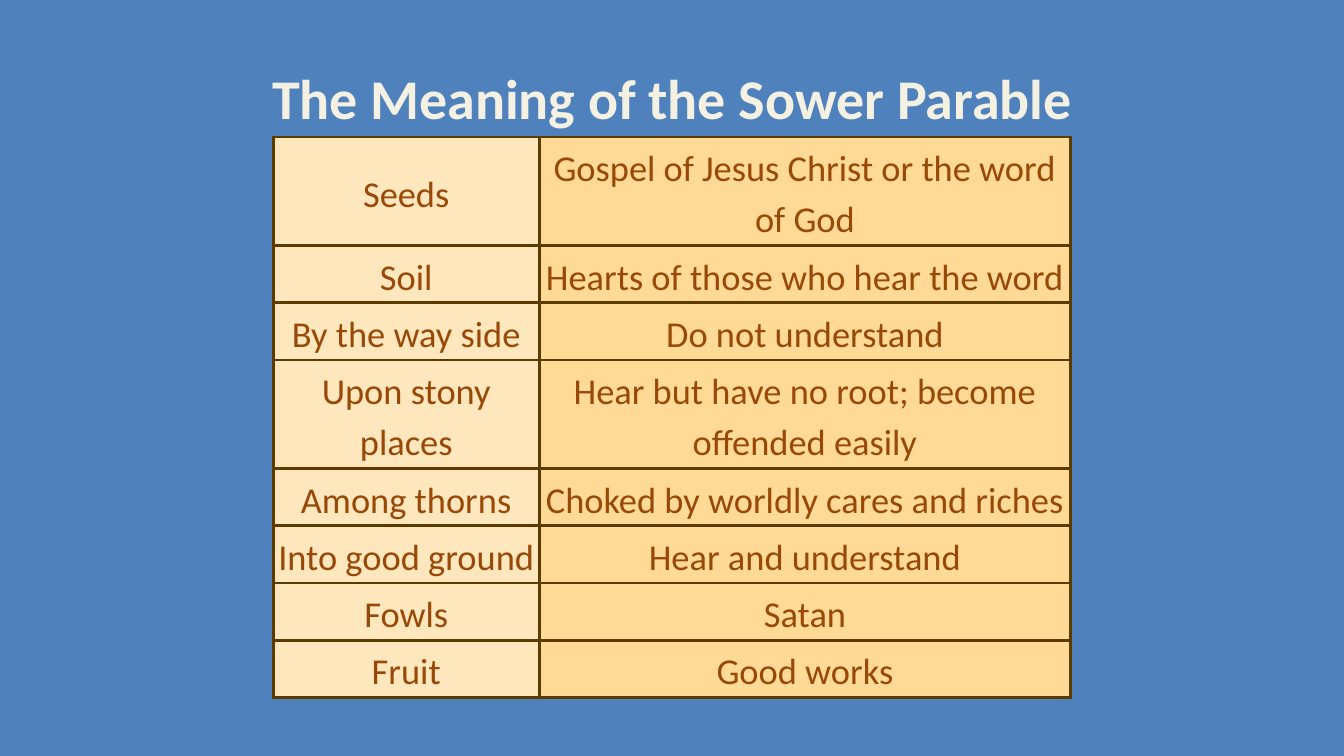
"""Build a slide with a table that explains the parable of the sower."""
import lxml.etree
import pptx
import pptx.dml.color
import pptx.enum.text
import pptx.oxml.ns
import pptx.util

Inches = pptx.util.Inches
RGBColor = pptx.dml.color.RGBColor

BACKGROUND = RGBColor(0x4F, 0x81, 0xBD)
TITLE_COLOR = RGBColor(0xF4, 0xF1, 0xE3)
TEXT_COLOR = RGBColor(0x98, 0x48, 0x07)
BORDER_COLOR = RGBColor(0x5C, 0x3B, 0x00)
COLUMN_FILLS = (RGBColor(0xFF, 0xE7, 0xBD), RGBColor(0xFF, 0xDA, 0x97))

FONT = "Calibri"
COLUMN_WIDTHS = (2.64, 5.27)
ONE_LINE, TWO_LINES = 0.55, 1.05
MEANINGS = (
    ("Seeds", "Gospel of Jesus Christ or the word of God", TWO_LINES),
    ("Soil", "Hearts of those who hear the word", ONE_LINE),
    ("By the way side", "Do not understand", ONE_LINE),
    ("Upon stony places", "Hear but have no root; become offended easily", TWO_LINES),
    ("Among thorns", "Choked by worldly cares and riches", ONE_LINE),
    ("Into good ground", "Hear and understand", ONE_LINE),
    ("Fowls", "Satan", ONE_LINE),
    ("Fruit", "Good works", ONE_LINE),
)


def write_text(frame, text, *, size, color, bold=False, line_spacing=None, space_after=None):
    """Write one centred paragraph into a text frame."""
    frame.word_wrap = True
    para = frame.paragraphs[0]
    para.alignment = pptx.enum.text.PP_ALIGN.CENTER
    para.line_spacing = line_spacing
    para.space_before = pptx.util.Pt(0)
    para.space_after = space_after
    span = para.add_run()
    span.text = text
    span.font.name = FONT
    span.font.size = pptx.util.Pt(size)
    span.font.bold = bold
    span.font.color.rgb = color


def add_borders(cell, color, width):
    """Draw a solid line on all four sides of a cell."""
    qn = pptx.oxml.ns.qn
    properties = cell._tc.get_or_add_tcPr()
    for position, side in enumerate(("a:lnL", "a:lnR", "a:lnT", "a:lnB")):
        line = lxml.etree.Element(qn(side), w=str(pptx.util.Pt(width)))
        fill = lxml.etree.SubElement(line, qn("a:solidFill"))
        lxml.etree.SubElement(fill, qn("a:srgbClr"), val=str(color))
        properties.insert(position, line)


def format_cell(cell, text, fill):
    """Fill, frame and label one table cell."""
    cell.fill.solid()
    cell.fill.fore_color.rgb = fill
    cell.vertical_anchor = pptx.enum.text.MSO_ANCHOR.MIDDLE
    cell.margin_left = cell.margin_right = Inches(0.03)
    cell.margin_top = cell.margin_bottom = Inches(0.03)
    write_text(cell.text_frame, text, size=26, color=TEXT_COLOR,
               line_spacing=1.15, space_after=pptx.util.Pt(10))
    add_borders(cell, BORDER_COLOR, 2.25)


def add_title(page, text):
    """Place and format the title placeholder."""
    title = page.shapes.title
    title.left, title.top = Inches(2.5), Inches(0.58)
    title.width, title.height = Inches(8.33), Inches(0.77)
    title.text_frame.vertical_anchor = pptx.enum.text.MSO_ANCHOR.TOP
    title.text_frame.auto_size = pptx.enum.text.MSO_AUTO_SIZE.NONE
    write_text(title.text_frame, text, size=40, color=TITLE_COLOR, bold=True)


def add_meanings(page):
    """Add the table of symbols and their meanings."""
    height = sum(row_height for *_, row_height in MEANINGS)
    table = page.shapes.add_table(
        len(MEANINGS), len(COLUMN_WIDTHS), Inches(2.71), Inches(1.36),
        Inches(sum(COLUMN_WIDTHS)), Inches(height)).table
    table.first_row = table.horz_banding = False
    for column, width in zip(table.columns, COLUMN_WIDTHS):
        column.width = Inches(width)
    for row, (*texts, row_height) in zip(table.rows, MEANINGS):
        row.height = Inches(row_height)
        for cell, text, fill in zip(row.cells, texts, COLUMN_FILLS):
            format_cell(cell, text, fill)


def main():
    """Build and save the deck."""
    deck = pptx.Presentation()
    deck.slide_width, deck.slide_height = Inches(13.33), Inches(7.5)
    page = deck.slides.add_slide(deck.slide_layouts.get_by_name("Title Only"))
    page.background.fill.solid()
    page.background.fill.fore_color.rgb = BACKGROUND
    add_meanings(page)
    add_title(page, "The Meaning of the Sower Parable")
    deck.save("out.pptx")


if __name__ == "__main__":
    main()
